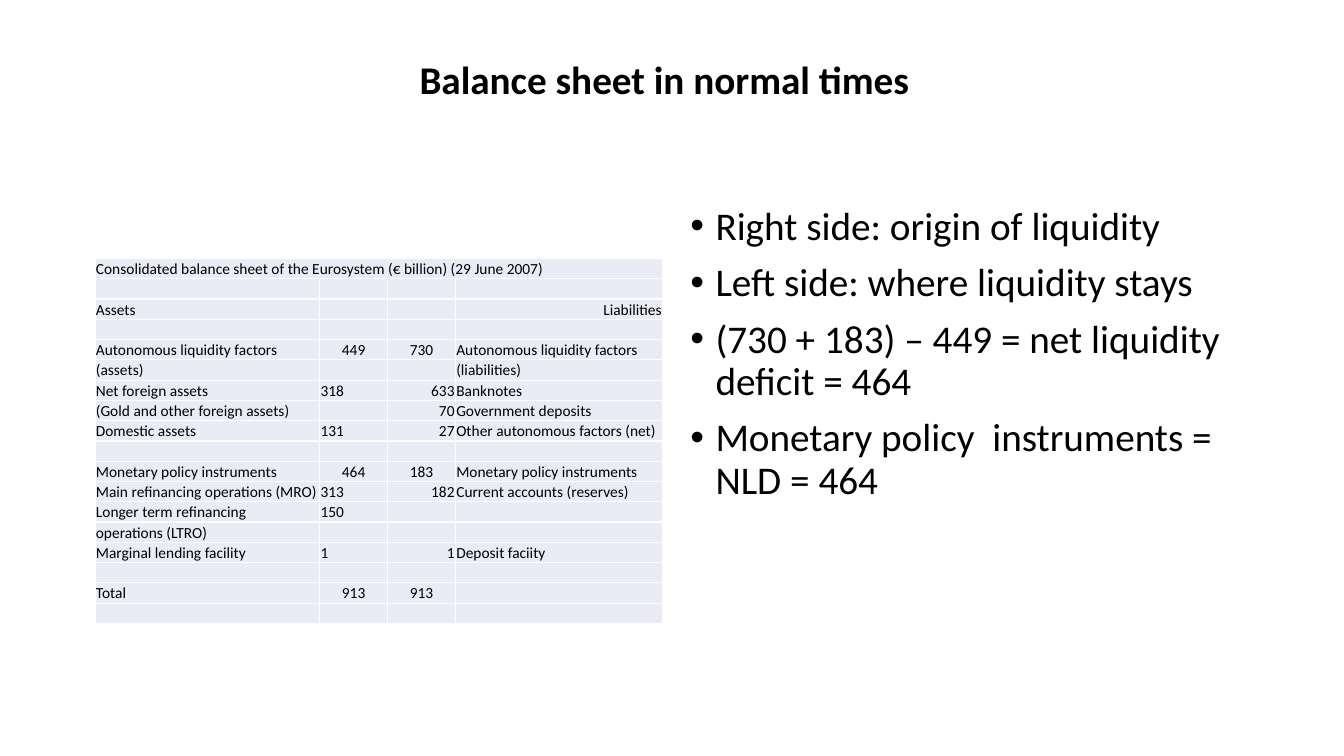
"""Build a slide with a central bank balance sheet and its reading."""
from dataclasses import dataclass

from lxml.etree import SubElement as Sub
from pptx import Presentation
from pptx.dml.color import RGBColor
from pptx.enum.text import MSO_ANCHOR as Anchor, PP_ALIGN as Align
from pptx.oxml.ns import qn
from pptx.slide import Slide
from pptx.table import _Cell as Cell
from pptx.text.text import TextFrame, _Paragraph as Para
from pptx.util import Pt

BLACK = RGBColor(0x00, 0x00, 0x00)
WHITE = RGBColor(0xFF, 0xFF, 0xFF)
PALE = RGBColor(0xE9, 0xEB, 0xF5)
FONT = "Calibri"
HEIGHT = 14.5
WIDTHS = (160.5, 48.5, 48.5, 148)


@dataclass(frozen=True)
class Row:
    asset: str = ""
    used: str = ""
    owed: str = ""
    debt: str = ""
    total: bool = False
    head: bool = False

    def cells(self) -> list[tuple[str, Align]]:
        mid = Align.CENTER if self.total else None
        return [
            (self.asset, Align.LEFT),
            (self.used, mid or Align.LEFT),
            (self.owed, mid or Align.RIGHT),
            (self.debt, Align.RIGHT if self.head else Align.LEFT),
        ]


TITLE = "Balance sheet in normal times"
ROWS = (
    Row("Consolidated balance sheet of the Eurosystem (€ billion) (29 June 2007)"),
    Row(),
    Row("Assets", debt="Liabilities", head=True),
    Row(),
    Row("Autonomous liquidity factors", "449", "730",
        "Autonomous liquidity factors", total=True),
    Row("(assets)", debt="(liabilities)"),
    Row("Net foreign assets", "318", "633", "Banknotes"),
    Row("(Gold and other foreign assets)", "", "70", "Government deposits"),
    Row("Domestic assets", "131", "27", "Other autonomous factors (net)"),
    Row(),
    Row("Monetary policy instruments", "464", "183",
        "Monetary policy instruments", total=True),
    Row("Main refinancing operations (MRO)", "313", "182",
        "Current accounts (reserves)"),
    Row("Longer term refinancing", "150"),
    Row("operations (LTRO)"),
    Row("Marginal lending facility", "1", "1", "Deposit faciity"),
    Row(),
    Row("Total", "913", "913", total=True),
    Row(),
)
POINTS = (
    "Right side: origin of liquidity",
    "Left side: where liquidity stays",
    "(730 + 183) – 449 = net liquidity deficit = 464",
    "Monetary policy  instruments = NLD = 464",
)


def style(para: Para, size: float, bold: bool = False) -> None:
    font = para.font
    font.name, font.size, font.bold = FONT, Pt(size), bold
    font.color.rgb = BLACK


def add_text(slide: Slide, left: float, top: float, width: float,
             height: float) -> TextFrame:
    box = slide.shapes.add_textbox(Pt(left), Pt(top), Pt(width), Pt(height))
    box.text_frame.word_wrap = True
    return box.text_frame


def add_title(slide: Slide) -> None:
    frame = add_text(slide, 66, 29, 817, 59)
    frame.vertical_anchor = Anchor.MIDDLE
    para = frame.paragraphs[0]
    para.text, para.alignment, para.line_spacing = TITLE, Align.CENTER, 0.9
    style(para, 28, True)


def add_edges(cell: Cell) -> None:
    props = cell._tc.get_or_add_tcPr()
    for at, side in enumerate(("lnL", "lnR", "lnT", "lnB")):
        line = Sub(props, qn(f"a:{side}"), w=str(Pt(1)))
        fill = Sub(line, qn("a:solidFill"))
        Sub(fill, qn("a:srgbClr"), val=str(WHITE))
        props.insert(at, line)


def fill_cell(cell: Cell, text: str, align: Align) -> None:
    cell.fill.solid()
    cell.fill.fore_color.rgb = PALE
    add_edges(cell)
    cell.margin_left = cell.margin_right = cell.margin_top = Pt(0.6)
    cell.margin_bottom = Pt(0)
    cell.vertical_anchor = Anchor.BOTTOM
    para = cell.text_frame.paragraphs[0]
    para.alignment = align
    style(para, 11)
    if text:
        para.text = text
    else:
        Sub(para._p, qn("a:endParaRPr"), sz="1100")


def add_sheet(slide: Slide) -> None:
    table = slide.shapes.add_table(
        len(ROWS), len(WIDTHS), Pt(67.9), Pt(184.6),
        Pt(sum(WIDTHS)), Pt(HEIGHT * len(ROWS))).table
    table.first_row = table.horz_banding = False
    for col, width in zip(table.columns, WIDTHS):
        col.width = Pt(width)
    for y, row in enumerate(ROWS):
        table.rows[y].height = Pt(HEIGHT)
        for x, (text, align) in enumerate(row.cells()):
            fill_cell(table.cell(y, x), text, align)
    table.cell(0, 0).merge(table.cell(0, len(WIDTHS) - 1))


def add_points(slide: Slide) -> None:
    frame = add_text(slide, 486, 144, 408, 343)
    for i, text in enumerate(POINTS):
        para = frame.add_paragraph() if i else frame.paragraphs[0]
        para.text, para.line_spacing, para.space_before = text, 0.9, Pt(10)
        props = para._p.get_or_add_pPr()
        props.set("marL", str(Pt(18)))
        props.set("indent", str(Pt(-18)))
        Sub(props, qn("a:buFont"), typeface="Arial")
        Sub(props, qn("a:buChar"), char="•")
        style(para, 28)


def main() -> None:
    deck = Presentation()
    deck.slide_width, deck.slide_height = Pt(960), Pt(540)
    slide = deck.slides.add_slide(deck.slide_layouts[6])
    add_title(slide)
    add_sheet(slide)
    add_points(slide)
    deck.save("out.pptx")


if __name__ == "__main__":
    main()
